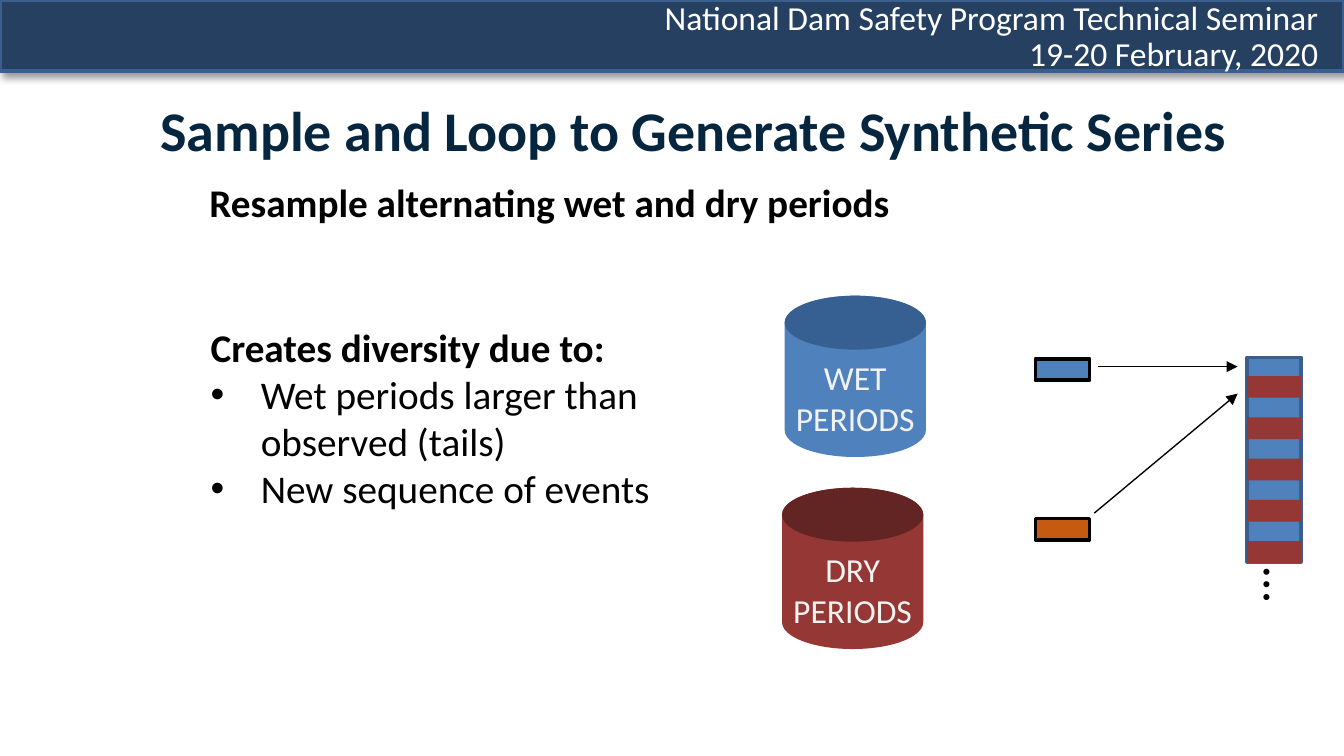
from lxml import etree
from pptx import Presentation, util as u
from pptx.dml import color
from pptx.enum import shapes, text
from pptx.oxml import ns

SHAPE = shapes.MSO_SHAPE
ALIGN = text.PP_ALIGN
WET, DRY, EDGE = "4F81BD", "953735", "3A5F8C"


def rgb(value):
    return color.RGBColor.from_string(value)


def add_xml(parent, tag, **attrs):
    return etree.SubElement(parent, ns.qn(tag), attrs)


def add_shape(s, kind, box, fill, line=None, width=2):
    sp = s.shapes.add_shape(kind, *map(u.Cm, box))
    sp.shadow.inherit = False
    sp.fill.solid()
    sp.fill.fore_color.rgb = rgb(fill)
    if line:
        sp.line.color.rgb = rgb(line)
        sp.line.width = u.Pt(width)
    else:
        sp.line.fill.background()
    return sp


def add_text(s, box, lines, size, ink="000000", bold=False, wrap=True, **para):
    sp = s.shapes.add_textbox(*map(u.Cm, box))
    tf = sp.text_frame
    tf.word_wrap = wrap
    for i, line in enumerate(lines):
        p = tf.paragraphs[0] if i == 0 else tf.add_paragraph()
        for name, value in para.items():
            setattr(p, name, value)
        r = p.add_run()
        r.text = line
        font = {"name": "Calibri", "size": u.Pt(size), "bold": bold}
        for name, value in font.items():
            setattr(r.font, name, value)
        r.font.color.rgb = rgb(ink)
    return sp


def add_arrow(s, x1, y1, x2, y2):
    cx = s.shapes.add_connector(shapes.MSO_CONNECTOR.STRAIGHT,
                                *map(u.Cm, (x1, y1, x2, y2)))
    cx.line.color.rgb = rgb("000000")
    cx.line.width = u.Pt(0.75)
    add_xml(cx.line._get_or_add_ln(), "a:tailEnd", type="triangle")
    add_xml(cx._element.spPr, "a:effectLst")


def header(s, x, y, w, h):
    bar = add_shape(s, SHAPE.RECTANGLE, (x, y, w, h), "254061", EDGE)
    # soft shadow below the bar
    effects = bar._element.spPr.find(ns.qn("a:effectLst"))
    shadow = add_xml(effects, "a:outerShdw", blurRad=str(u.Pt(4)),
                     dist=str(u.Pt(3)), dir="2700000", rotWithShape="0")
    ink = add_xml(shadow, "a:srgbClr", val="000000")
    add_xml(ink, "a:alpha", val="40000")
    add_text(s, (x + 10.16, y - 0.1, 15.01, 1.65),
             ["National Dam Safety Program Technical Seminar",
              "19-20 February, 2020"],
             18, "FFFFFF", alignment=ALIGN.RIGHT, line_spacing=0.9)


def title(s, *box):
    sp = add_text(s, box, ["Sample and Loop to Generate Synthetic Series"],
                  30, "06263F", True, alignment=ALIGN.CENTER)
    sp.text_frame.margin_top = 0


def diversity_list(s, *box):
    sp = add_text(s, box, ["Creates diversity due to:",
                           "Wet periods larger than observed (tails)",
                           "New sequence of events"], 21)
    heading, *items = sp.text_frame.paragraphs
    heading.runs[0].font.bold = True
    indent = u.Cm(0.95)
    for p in items:
        pPr = p._p.get_or_add_pPr()
        pPr.set("marL", str(indent))
        pPr.set("indent", str(-indent))
        add_xml(pPr, "a:buFont", typeface="Arial")
        add_xml(pPr, "a:buChar", char="•")


def period_store(s, x, y, w, h, label, fill, lid):
    add_shape(s, SHAPE.FLOWCHART_MAGNETIC_DISK, (x, y, w, h), fill)
    add_text(s, (x - 0.23, y + 1.04, w + 0.46, 1.8), [label],
             18, "F2F2F2", alignment=ALIGN.CENTER)
    add_shape(s, SHAPE.OVAL, (x, y, w, 1.02), lid)


def series_column(s, x, y, w, h):
    add_shape(s, SHAPE.RECTANGLE, (x, y, w, h), WET, EDGE)
    # dry stripes at an even pitch
    for i in range(5):
        add_shape(s, SHAPE.RECTANGLE, (x, y + 0.35 + i * 0.78, w, 0.41), DRY)
    dots = add_text(s, (x + 0.1, y + h - 0.26, 1.17, 1.42), ["…"], 27,
                    wrap=False)
    dots.rotation = 90


def sampling(s, x, y, w, h):
    # one sampled wet and one sampled dry period
    for dy, fill in ((0, WET), (3.02, "C55A11")):
        add_shape(s, SHAPE.RECTANGLE, (x, y + dy, w, h), fill, "000000")
    add_arrow(s, x + 1.18, y + 0.15, x + 3.82, y + 0.15)
    add_arrow(s, x + 1.11, y + 2.92, x + 3.82, y + 0.66)


def main():
    prs = Presentation()
    prs.slide_width, prs.slide_height = u.Cm(25.4), u.Cm(14.29)
    s = prs.slides.add_slide(prs.slide_layouts[6])

    header(s, 0, 0, 25.4, 1.35)
    title(s, 1.68, 1.8, 22.86, 2.39)

    # left-hand text
    add_text(s, (3.71, 3.25, 15.88, 1.14),
             ["Resample alternating wet and dry periods"], 21, bold=True)
    diversity_list(s, 3.73, 5.99, 8.94, 3.84)

    # stores, samples and the resulting series
    period_store(s, 14.83, 5.59, 2.67, 3.05, "WET PERIODS", WET, "376092")
    period_store(s, 14.78, 9.22, 2.67, 3.05, "DRY PERIODS", DRY, "632523")
    sampling(s, 19.57, 6.78, 1.02, 0.41)
    series_column(s, 23.57, 6.76, 1.02, 3.86)

    prs.save("out.pptx")


if __name__ == "__main__":
    main()
